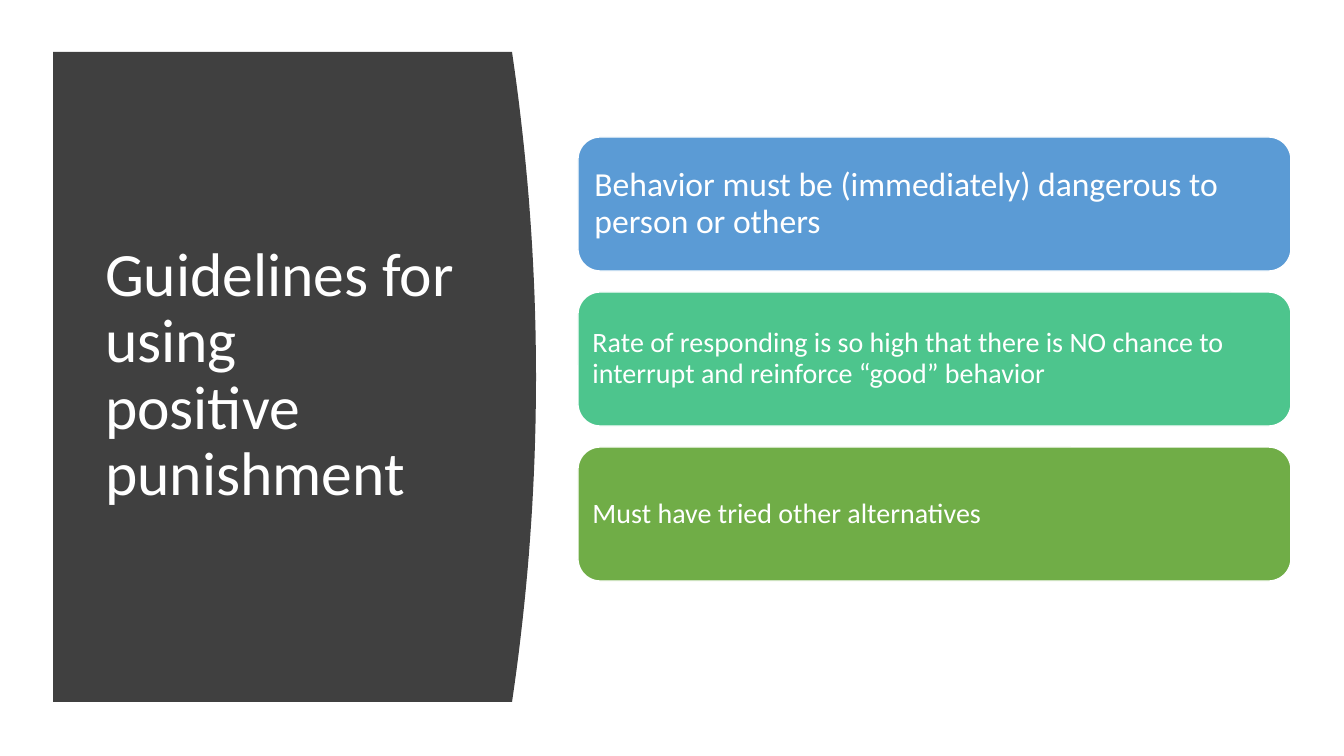
from pptx import Presentation
from pptx.dml.color import RGBColor
from pptx.enum.shapes import MSO_SHAPE
from pptx.enum.text import MSO_ANCHOR, MSO_AUTO_SIZE, PP_ALIGN
from pptx.util import Pt

PX = 914400 / 100.8
COLORS = {"panel": "404040", "blue": "5B9BD5", "teal": "4DC58D",
          "green": "70AD47", "white": "FFFFFF"}


def px(n):
    return round(n * PX)


def write(frame, text, size, pad):
    frame.text = text
    frame.word_wrap = True
    frame.auto_size = MSO_AUTO_SIZE.NONE
    frame.vertical_anchor = MSO_ANCHOR.MIDDLE
    frame.margin_left = frame.margin_right = px(pad)
    frame.margin_top = frame.margin_bottom = px(pad)
    para = frame.paragraphs[0]
    para.alignment = PP_ALIGN.LEFT
    para.line_spacing = 0.9
    para.font.name = "Calibri"
    para.font.size = Pt(size)
    para.font.color.rgb = RGBColor.from_string(COLORS["white"])


deck = Presentation()
deck.slide_width, deck.slide_height = px(1344), px(756)
slide = deck.slides.add_slide(deck.slide_layouts[5])
shapes = slide.shapes
title = shapes.title

# Dark panel whose right edge bulges as a parabola
left, top, base, bulge, half, steps = 53, 52, 512, 24, 325, 40
edge = []
for i in range(steps + 1):
    t = 2 * i / steps - 1
    edge.append((px(base + bulge * (1 - t * t)), px(top + half * (1 + t))))
path = shapes.build_freeform(px(left), px(top))
path.add_line_segments(edge + [(px(left), px(top + 2 * half))], close=True)
panel = path.convert_to_shape()
panel.shadow.inherit = False
panel.fill.solid()
panel.fill.fore_color.rgb = RGBColor.from_string(COLORS["panel"])
panel.line.fill.background()
title._element.addprevious(panel._element)  # panel goes behind the title

# Title
title.left, title.top, title.width, title.height = px(95), px(112), px(377), px(528)
write(title.text_frame, "Guidelines for using \vpositive punishment", 44, 10)

# Guideline cards
cards = [
    ("Behavior must be (immediately) dangerous to person or others", "blue", 24, 10),
    ("Rate of responding is so high that there is NO chance to interrupt "
     "and reinforce “good” behavior", "teal", 20, 8),
    ("Must have tried other alternatives", "green", 20, 8),
]
for i, (text, color, size, pad) in enumerate(cards):
    card = shapes.add_shape(MSO_SHAPE.ROUNDED_RECTANGLE,
                            px(578), px(137 + 155 * i), px(713), px(134))
    card.shadow.inherit = False
    card.fill.solid()
    card.fill.fore_color.rgb = RGBColor.from_string(COLORS[color])
    card.line.color.rgb = RGBColor.from_string(COLORS["white"])
    card.line.width = Pt(1)
    write(card.text_frame, text, size, pad)

deck.save("out.pptx")
